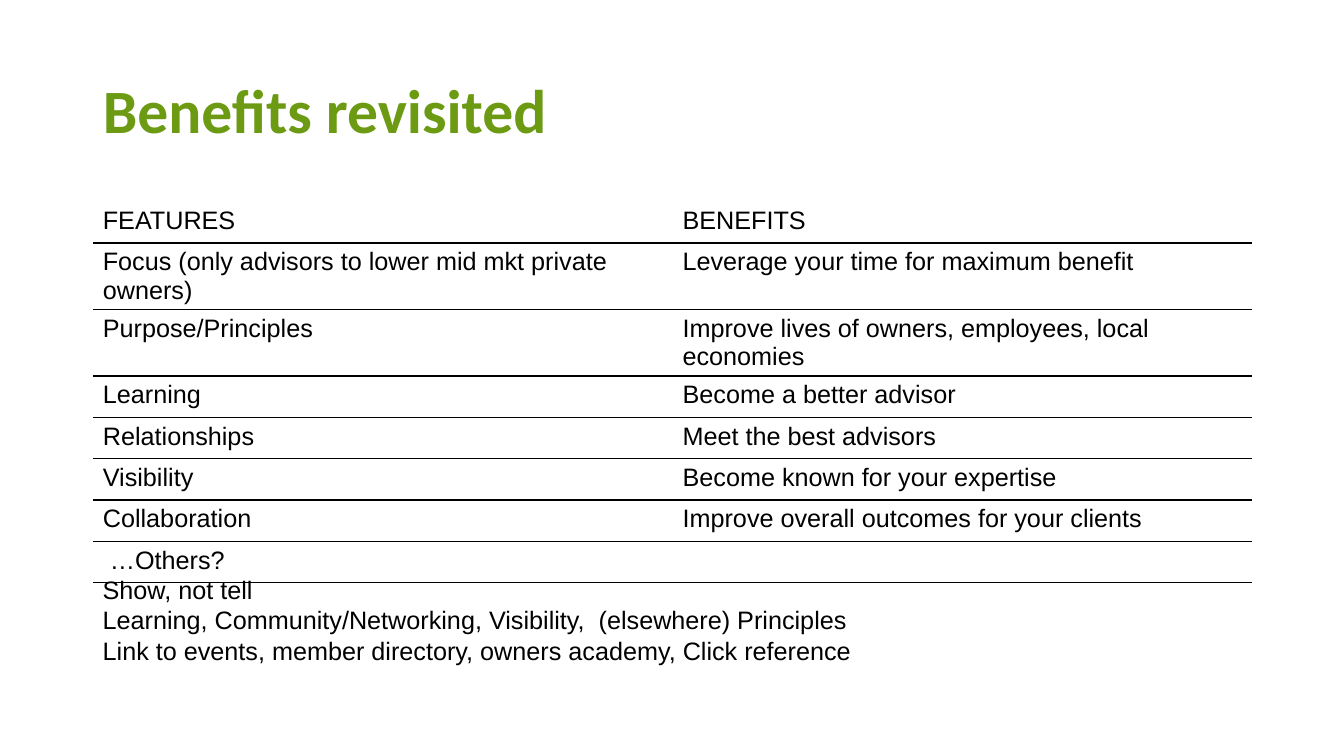
from lxml.etree import SubElement
from pptx import Presentation
from pptx.dml.color import RGBColor
from pptx.enum.text import MSO_ANCHOR, PP_ALIGN
from pptx.oxml.ns import qn
from pptx.util import Inches, Pt

BLACK = "000000"
GREEN = "6C9A13"
LEFT = 0.92
ROW_HEIGHT = 0.41

BENEFITS = [
    ("FEATURES", "BENEFITS"),
    ("Focus (only advisors to lower mid mkt private owners)",
     "Leverage your time for maximum benefit"),
    ("Purpose/Principles", "Improve lives of owners, employees, local economies"),
    ("Learning", "Become a better advisor"),
    ("Relationships", "Meet the best advisors"),
    ("Visibility", "Become known for your expertise"),
    ("Collaboration", "Improve overall outcomes for your clients"),
    (" …Others?", ""),
    ("", ""),
]
NOTES = [
    "Show, not tell",
    "Learning, Community/Networking, Visibility,  (elsewhere) Principles",
    "Link to events, member directory, owners academy, Click reference",
]


def format_text(text_frame, font_name="Arial", size=18, color=BLACK, bold=False):
    for paragraph in text_frame.paragraphs:
        paragraph.alignment = PP_ALIGN.LEFT
        for run in paragraph.runs:
            run.font.name = font_name
            run.font.size = Pt(size)
            run.font.bold = bold
            run.font.color.rgb = RGBColor.from_string(color)


def set_borders(cell, top, bottom):
    """Rule the cell above and below as asked, never at its sides."""
    properties = cell._tc.get_or_add_tcPr()
    sides = {"lnL": False, "lnR": False, "lnT": top, "lnB": bottom}
    for side, visible in sides.items():
        line = SubElement(properties, qn(f"a:{side}"), w=str(Pt(1)))
        if visible:
            fill = SubElement(line, qn("a:solidFill"))
            SubElement(fill, qn("a:srgbClr"), val=BLACK)
        else:
            SubElement(line, qn("a:noFill"))


def add_title(slide, text):
    title = slide.shapes.title
    title.left, title.top = Inches(LEFT), Inches(0.4)
    title.width, title.height = Inches(11.5), Inches(1.45)
    text_frame = title.text_frame
    text_frame.text = text
    text_frame.vertical_anchor = MSO_ANCHOR.MIDDLE
    text_frame.paragraphs[0].line_spacing = 0.9
    format_text(text_frame, "Calibri", 44, GREEN, bold=True)


def add_benefits_table(slide, rows):
    table = slide.shapes.add_table(
        len(rows), 2, Inches(LEFT), Inches(2),
        Inches(11.5), Inches(ROW_HEIGHT * len(rows))).table
    table.first_row = False
    table.horz_banding = False
    for row_index, texts in enumerate(rows):
        for column_index, text in enumerate(texts):
            cell = table.cell(row_index, column_index)
            cell.text_frame.text = text
            format_text(cell.text_frame)
            set_borders(cell, top=row_index > 0, bottom=row_index < len(rows) - 1)
            cell.fill.background()


def add_notes_text(slide, lines):
    box = slide.shapes.add_textbox(
        Inches(LEFT), Inches(5.65), Inches(11.67), Inches(1.01))
    box.text_frame.word_wrap = True
    box.text_frame.text = "\n".join(lines)
    format_text(box.text_frame)


def main():
    presentation = Presentation()
    presentation.slide_width = Inches(13.33)
    presentation.slide_height = Inches(7.5)
    slide = presentation.slides.add_slide(presentation.slide_layouts[5])
    add_title(slide, "Benefits revisited")
    add_benefits_table(slide, BENEFITS)
    add_notes_text(slide, NOTES)
    presentation.save("out.pptx")


if __name__ == "__main__":
    main()
